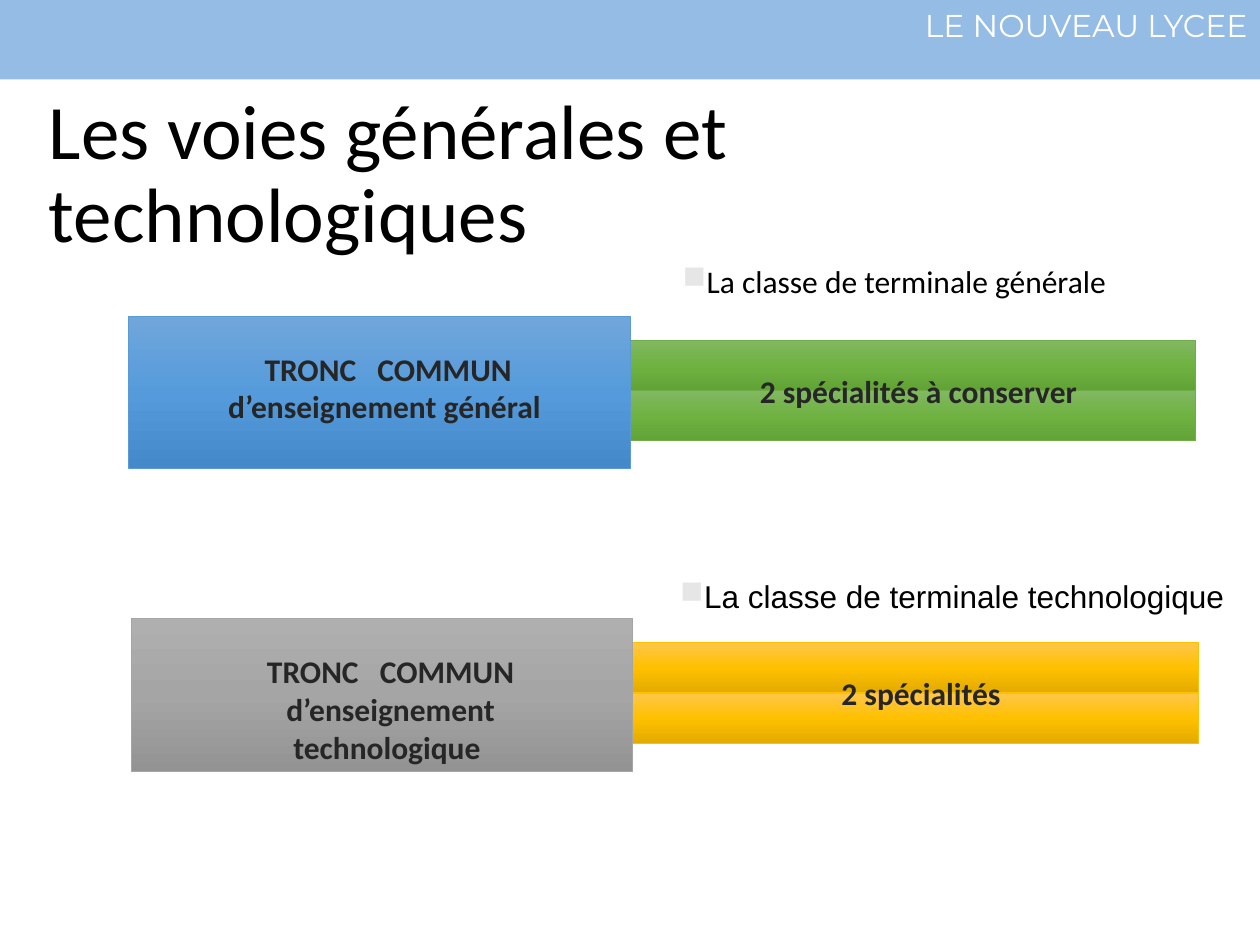
from copy import deepcopy
from dataclasses import dataclass

from pptx import Presentation
from pptx.dml.color import RGBColor
from pptx.enum.shapes import MSO_SHAPE
from pptx.enum.text import MSO_ANCHOR, PP_ALIGN
from pptx.oxml import parse_xml
from pptx.oxml.ns import nsdecls, qn
from pptx.util import Inches, Pt


@dataclass(frozen=True)
class Theme:
    banner: str = "95BCE5"
    light: str = "FFFFFF"
    dark: str = "000000"
    caption: str = "262626"
    bullet: str = "E7E6E6"
    # Each palette: line, then gradient from top to bottom
    blue: tuple = ("5B9BD5", "71A6DB", "559BDB", "448ACA")
    green: tuple = ("70AD47", "81B861", "6FB242", "62A336")
    grey: tuple = ("A5A5A5", "AFAFAF", "A5A5A5", "939393")
    gold: tuple = ("FFC000", "FFC64B", "FFC000", "E3AB00")
    font: str = "Calibri"
    banner_font: str = "Montserrat"
    label_font: str = "Arial"
    title_size: int = 44
    text_size: int = 18


THEME = Theme()
WIDTH, HEIGHT = 10, 7.5
CORE_WIDTH, CORE_HEIGHT = 3.98, 1.21
BAND_WIDTH, BAND_HEIGHT, BAND_DROP = 4.49, 0.4, 0.19
CAPTION_WIDTH = 2.98


def set_all(target, values):
    for name, value in values.items():
        setattr(target, name, value)


def add_rectangle(page, left, top, width, height):
    box = page.shapes.add_shape(
        MSO_SHAPE.RECTANGLE, *map(Inches, (left, top, width, height)))
    box.shadow.inherit = False
    return box


def add_banner(page):
    box = add_rectangle(page, 0, 0, WIDTH, 0.63)
    box.fill.solid()
    box.fill.fore_color.rgb = RGBColor.from_string(THEME.banner)
    box.line.fill.background()


def add_gradient_box(page, left, top, width, height, palette):
    box = add_rectangle(page, left, top, width, height)
    line_color, *colors = palette
    box.fill.gradient()
    stop_list = box.element.spPr.find(".//" + qn("a:gsLst"))
    stop_list.append(deepcopy(stop_list[-1]))
    box.fill.gradient_angle = 270
    for stop, position, color in zip(box.fill.gradient_stops, (0, 0.5, 1), colors):
        stop.position = position
        stop.color.rgb = RGBColor.from_string(color)
    box.line.color.rgb = RGBColor.from_string(line_color)
    box.line.width = Pt(0.5)


def add_text(page, text, left, top, width, height, color, font=None, frame=None,
             para=None, bullet=None):
    """Add a one-paragraph text box; font, frame and para hold format values."""
    box = page.shapes.add_textbox(*map(Inches, (left, top, width, height)))
    set_all(box.text_frame, {"word_wrap": True, **(frame or {})})
    paragraph = box.text_frame.paragraphs[0]
    set_all(paragraph, para or {})
    if bullet:
        add_bullet(paragraph, bullet)
    span = paragraph.add_run()
    span.text = text
    set_all(span.font, {"name": THEME.font, "size": Pt(THEME.text_size), **(font or {})})
    span.font.color.rgb = RGBColor.from_string(color)


def add_bullet(paragraph, color):
    properties = paragraph._p.get_or_add_pPr()
    properties.set("marL", str(Inches(0.19)))
    properties.set("indent", str(-Inches(0.19)))
    for markup in (f'<a:buClr {nsdecls("a")}><a:srgbClr val="{color}"/></a:buClr>',
                   f'<a:buChar {nsdecls("a")} char="■"/>'):
        properties.append(parse_xml(markup))


def add_class_label(page, text, left, top, font_name):
    add_text(page, text, left, top, 9.76, 0.9, THEME.dark, font={"name": font_name},
             para={"line_spacing": 3.0}, bullet=THEME.bullet)


def add_caption(page, text, left, top, height):
    add_text(page, text, left, top, CAPTION_WIDTH, height, THEME.caption,
             font={"bold": True}, frame={"vertical_anchor": MSO_ANCHOR.MIDDLE},
             para={"alignment": PP_ALIGN.CENTER})


def add_track(page, left, top, core, core_height, core_palette, option, band_palette):
    """Add the common-core block followed by its two stacked speciality bands."""
    band_left, band_top = left + CORE_WIDTH, top + BAND_DROP
    for row in range(2):
        add_gradient_box(page, band_left, band_top + row * BAND_HEIGHT,
                         BAND_WIDTH, BAND_HEIGHT, band_palette)
    add_gradient_box(page, left, top, CORE_WIDTH, CORE_HEIGHT, core_palette)
    add_caption(page, core, left + 0.57, top + 0.21, core_height)
    add_caption(page, option, band_left + 0.8, band_top + BAND_HEIGHT / 2, BAND_HEIGHT)


def main():
    deck = Presentation()
    deck.slide_width, deck.slide_height = Inches(WIDTH), Inches(HEIGHT)
    page = deck.slides.add_slide(deck.slide_layouts[6])

    add_banner(page)
    add_text(page, "LE NOUVEAU LYCEE", 2.58, 0, 7.42, 0.71, THEME.light,
             font={"name": THEME.banner_font}, para={"alignment": PP_ALIGN.RIGHT})
    add_text(page, "Les voies générales et technologiques", 0.29, 0.69, 9.2, 1.41,
             THEME.dark, font={"size": Pt(THEME.title_size)},
             frame={"vertical_anchor": MSO_ANCHOR.MIDDLE}, para={"line_spacing": 0.9})

    add_class_label(page, "La classe de terminale générale", 5.32, 1.43, THEME.font)
    add_track(page, 1.02, 2.51, "TRONC   COMMUN d’enseignement général ", 0.71,
              THEME.blue, "2 spécialités à conserver", THEME.green)
    add_track(page, 1.04, 4.91, "TRONC   COMMUN d’enseignement technologique ", 1.01,
              THEME.grey, "2 spécialités", THEME.gold)
    add_class_label(page, "La classe de terminale technologique", 5.3, 3.93,
                    THEME.label_font)

    deck.save("out.pptx")


if __name__ == "__main__":
    main()
